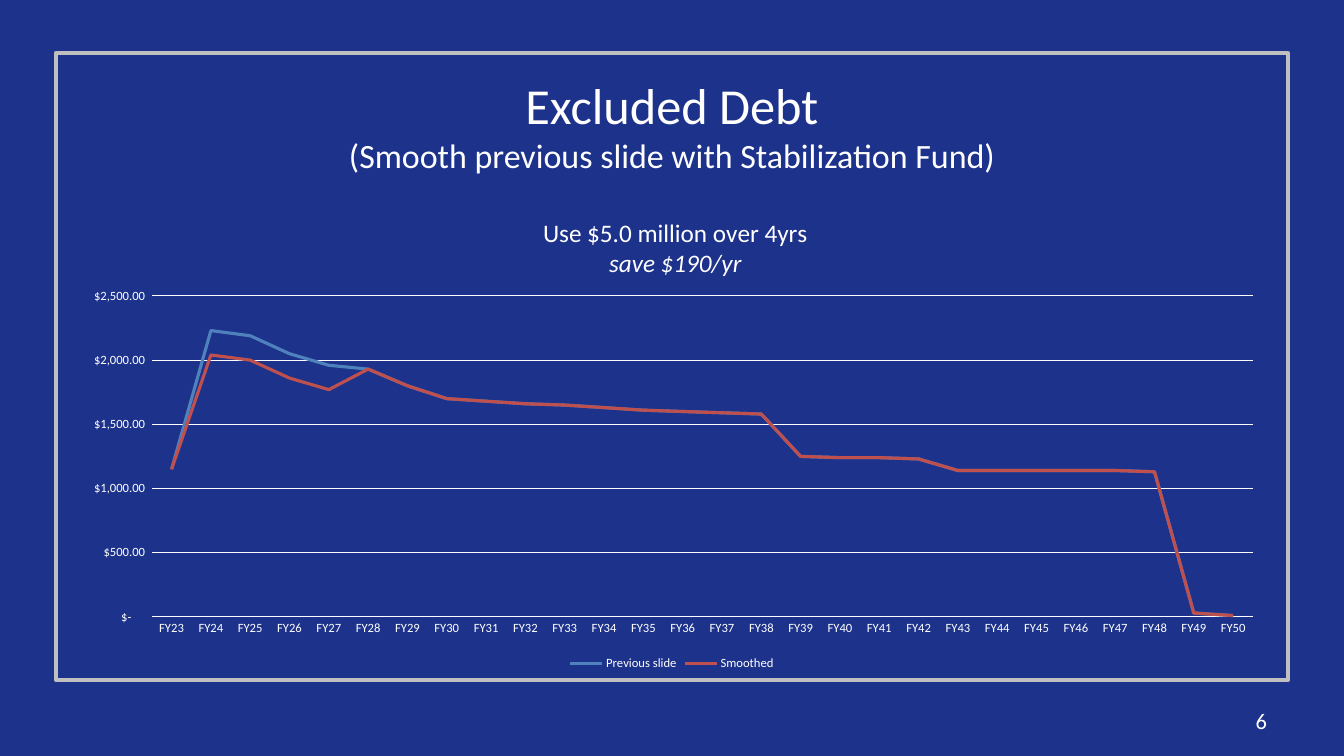
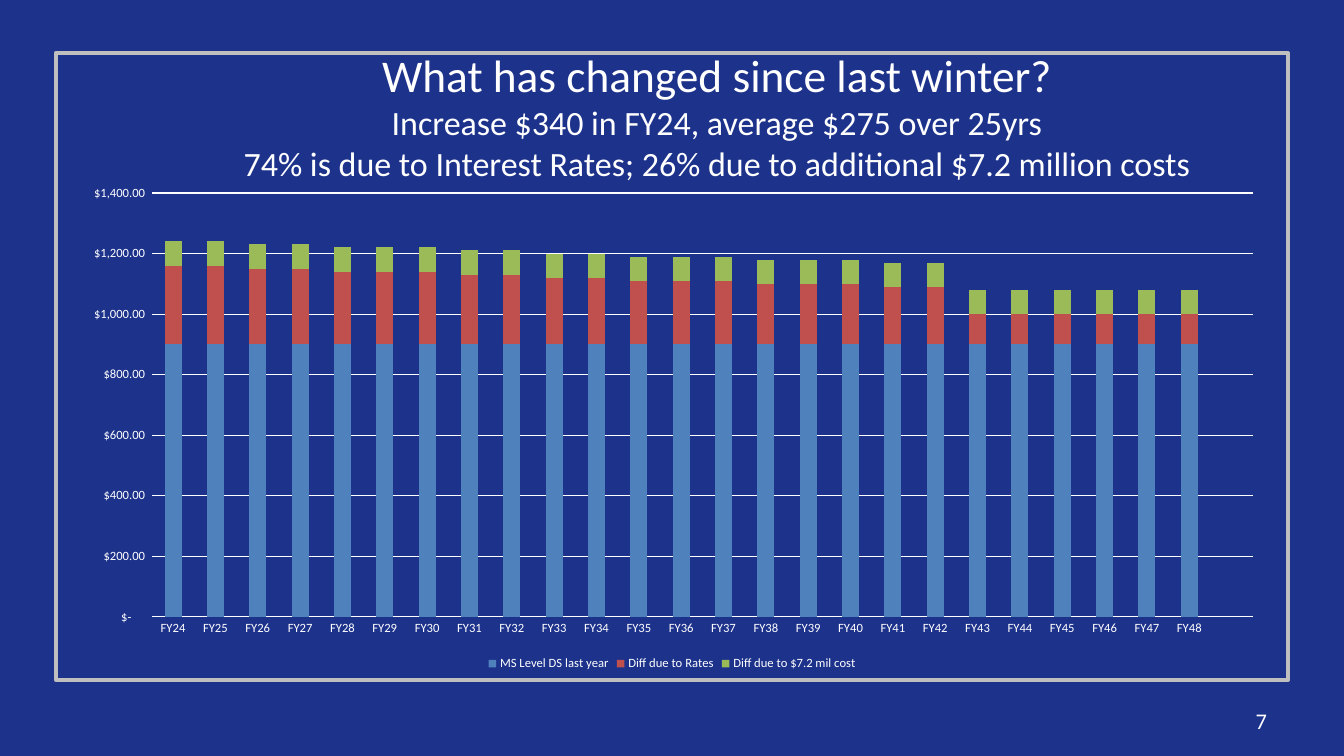
import pptx
import pptx.chart.data
import pptx.dml.color
import pptx.enum.chart
import pptx.enum.text
import pptx.oxml
import pptx.oxml.ns
import pptx.util

PX = 914400 / 100.8
FONT = "Calibri"
COLORS = {
    "background": "1D328B",
    "frame": "BFBFBF",
    "text": "FFFFFF",
    "series": ["4F81BD", "C0504D", "9BBB59"],
}
FRAME = (56, 53, 1232, 627)
NUMBER_BOX = (964, 701, 313, 40)
CURRENCY = '_("$"* #,##0.00_);_("$"* \\(#,##0.00\\);_("$"* "-"??_);_(@_)'
ChartType = pptx.enum.chart.XL_CHART_TYPE
Align = pptx.enum.text.PP_ALIGN

shared_debt = [1930, 1800, 1700, 1680, 1660, 1650, 1630, 1610, 1600, 1590, 1580,
               1250, 1240, 1240, 1230] + [1140] * 5 + [1130, 30, 10]
rate_increase = [260, 260, 250, 250, 240, 240, 240, 230, 230, 220, 220, 210, 210,
                 210, 200, 200, 200, 190, 190] + [100] * 6

SLIDES = [
    {
        "number": "6",
        "title": [("Excluded Debt", 36),
                  ("(Smooth previous slide with Stabilization Fund)", 24.3)],
        "title_box": (67, 62, 1210, 126),
        "chart_type": ChartType.LINE,
        "chart_box": (67, 193, 1210, 482),
        "plot_box": (152, 296, 1101, 321),
        "chart_title": [("Use $5.0 million over 4yrs", False), ("save $190/yr", True)],
        "chart_title_at": (540, 213),
        "years": [f"FY{year}" for year in range(23, 51)],
        "scale": (2500, 500),
        "series": [
            ("Previous slide", [1150, 2230, 2190, 2050, 1960] + shared_debt),
            ("Smoothed", [1150, 2040, 2000, 1860, 1770] + shared_debt),
        ],
    },
    {
        "number": "7",
        "title": [("What has changed since last winter?", 32.4),
                  ("Increase $340 in FY24, average $275 over 25yrs", 24.3),
                  ("74% is due to Interest Rates; 26% due to additional $7.2 million costs", 24.3)],
        "title_box": (112, 52, 1210, 126),
        "chart_type": ChartType.COLUMN_STACKED,
        "chart_box": (67, 176, 1210, 499),
        "plot_box": (152, 193, 1101, 424),
        "chart_title": [],
        "years": [f"FY{year}" for year in range(24, 49)] + [""],
        "scale": (1400, 200),
        "series": [
            ("MS Level DS last year", [900] * 25 + [None]),
            ("Diff due to Rates", rate_increase + [None]),
            ("Diff due to $7.2 mil cost", [80] * 25 + [None]),
        ],
    },
]


def emu(*lengths):
    return [pptx.util.Emu(round(length * PX)) for length in lengths]


def rgb(value):
    return pptx.dml.color.RGBColor.from_string(value)


def style_font(font, size):
    font.name = FONT
    font.size = pptx.util.Pt(size)
    font.bold = False
    font.color.rgb = rgb(COLORS["text"])


def style_line(line, color, width):
    line.color.rgb = rgb(color)
    line.width = pptx.util.Pt(width)


def write_lines(frame, lines, align):
    frame.word_wrap = True
    frame.auto_size = pptx.enum.text.MSO_AUTO_SIZE.NONE
    frame.vertical_anchor = pptx.enum.text.MSO_ANCHOR.MIDDLE
    frame.text = "\n".join(text for text, _ in lines)
    for paragraph, (_, size) in zip(frame.paragraphs, lines):
        paragraph.alignment = align
        style_font(paragraph.runs[0].font, size)


def add_frame(slide):
    frame = slide.shapes.add_shape(pptx.enum.shapes.MSO_SHAPE.RECTANGLE, *emu(*FRAME))
    frame.shadow.inherit = False
    frame.fill.background()
    style_line(frame.line, COLORS["frame"], 3)


def place_in_chart(part, index, chart_box, box, inner=False):
    for old in part.findall(pptx.oxml.ns.qn("c:layout")):
        part.remove(old)
    left, top, width, height = chart_box
    fractions = [(box[0] - left) / width, (box[1] - top) / height]
    fractions += [length / whole for length, whole in zip(box[2:], (width, height))]
    names = ["x", "y", "w", "h"][:len(fractions)]
    target = '<c:layoutTarget val="inner"/>' if inner else ""
    modes = "".join(f'<c:{name}Mode val="edge"/>' for name in "xy")
    values = "".join(f'<c:{name} val="{value:.4f}"/>' for name, value in zip(names, fractions))
    part.insert(index, pptx.oxml.parse_xml(
        f'<c:layout {pptx.oxml.ns.nsdecls("c")}><c:manualLayout>'
        f'{target}{modes}{values}</c:manualLayout></c:layout>'))


def add_chart_title(chart, content):
    chart.has_title = bool(content["chart_title"])
    if not chart.has_title:
        return
    frame = chart.chart_title.text_frame
    frame.text = "\n".join(text for text, _ in content["chart_title"])
    for paragraph, (_, italic) in zip(frame.paragraphs, content["chart_title"]):
        style_font(paragraph.runs[0].font, 18)
        paragraph.runs[0].font.italic = italic
    chart.chart_title.include_in_layout = False
    title = chart.element.xpath("./c:chart/c:title")[0]
    place_in_chart(title, 1, content["chart_box"], content["chart_title_at"])


def style_axes(chart, scale):
    category, value = chart.category_axis, chart.value_axis
    for axis in (category, value):
        axis.major_tick_mark = pptx.enum.chart.XL_TICK_MARK.NONE
        axis.minor_tick_mark = pptx.enum.chart.XL_TICK_MARK.NONE
        style_font(axis.tick_labels.font, 9)
    style_line(category.format.line, COLORS["text"], 0.75)
    value.format.line.fill.background()
    value.has_major_gridlines = True
    style_line(value.major_gridlines.format.line, COLORS["text"], 0.75)
    value.minimum_scale = 0
    value.maximum_scale, value.major_unit = scale
    value.tick_labels.number_format = CURRENCY
    value.tick_labels.number_format_is_linked = False


def add_debt_chart(slide, content):
    data = pptx.chart.data.CategoryChartData(number_format=CURRENCY)
    data.categories = content["years"]
    for name, values in content["series"]:
        data.add_series(name, values)
    chart = slide.shapes.add_chart(
        content["chart_type"], *emu(*content["chart_box"]), data).chart
    style_font(chart.font, 10)
    add_chart_title(chart, content)
    style_axes(chart, content["scale"])
    chart.has_legend = True
    chart.legend.position = pptx.enum.chart.XL_LEGEND_POSITION.BOTTOM
    chart.legend.include_in_layout = False
    style_font(chart.legend.font, 9)

    plot = chart.plots[0]
    plot.vary_by_categories = False
    is_line = content["chart_type"] == ChartType.LINE
    if not is_line:
        plot.gap_width = 150
        plot.overlap = 100
    for series, color in zip(plot.series, COLORS["series"]):
        if is_line:
            series.smooth = False
            style_line(series.format.line, color, 2.25)
        else:
            series.format.fill.solid()
            series.format.fill.fore_color.rgb = rgb(color)
    plot_area = chart.element.xpath("./c:chart/c:plotArea")[0]
    place_in_chart(plot_area, 0, content["chart_box"], content["plot_box"], inner=True)


def add_slide(deck, content):
    slide = deck.slides.add_slide(deck.slide_layouts[5])
    add_frame(slide)
    title = slide.shapes.title
    title.left, title.top, title.width, title.height = emu(*content["title_box"])
    write_lines(title.text_frame, content["title"], Align.CENTER)
    number = slide.shapes.add_textbox(*emu(*NUMBER_BOX))
    write_lines(number.text_frame, [(content["number"], 16)], Align.RIGHT)
    add_debt_chart(slide, content)


def main():
    deck = pptx.Presentation()
    deck.slide_width, deck.slide_height = emu(1344, 756)
    background = deck.slide_master.background.fill
    background.solid()
    background.fore_color.rgb = rgb(COLORS["background"])
    for content in SLIDES:
        add_slide(deck, content)
    deck.save("out.pptx")


if __name__ == "__main__":
    import pptx.enum.shapes
    main()
